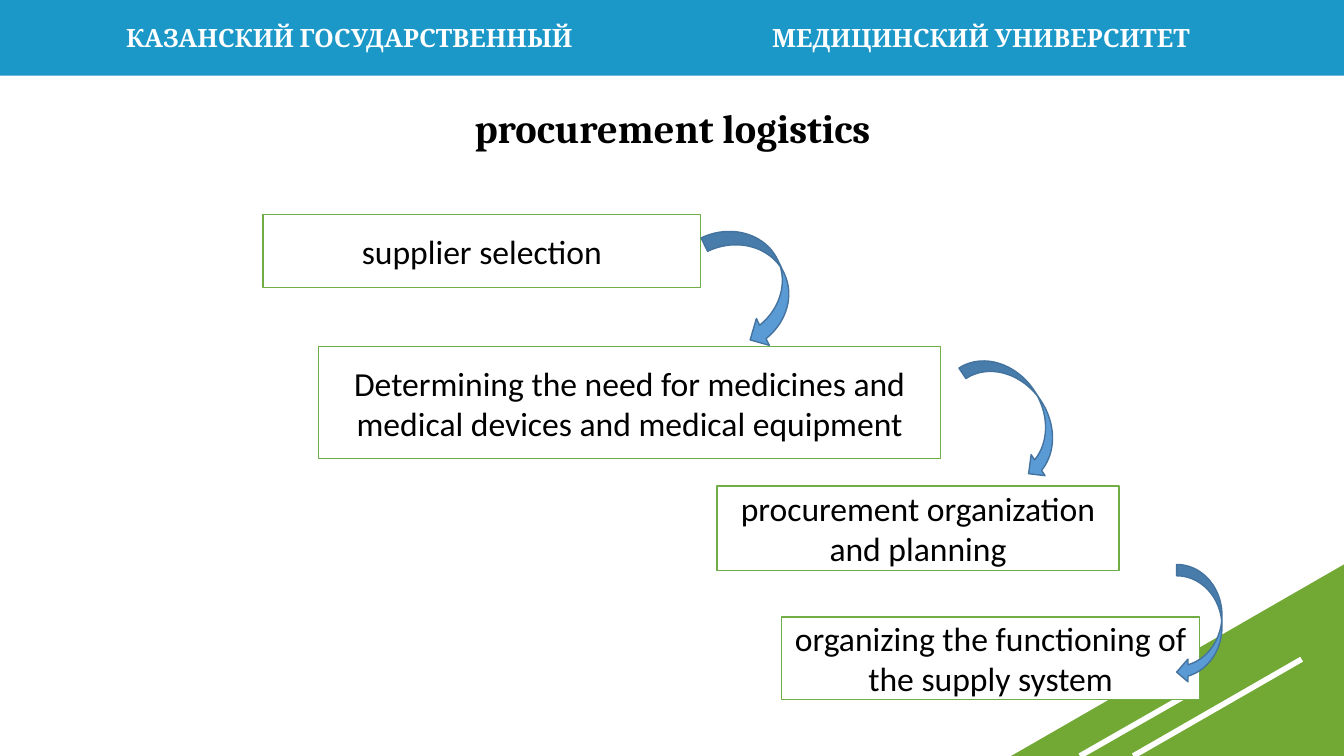
from dataclasses import dataclass

from lxml import etree
from pptx import Presentation
from pptx.dml.color import RGBColor
from pptx.enum.shapes import MSO_CONNECTOR, MSO_SHAPE
from pptx.enum.text import MSO_ANCHOR, PP_ALIGN
from pptx.oxml.ns import qn
from pptx.util import Inches, Pt

RECTANGLE = MSO_SHAPE.RECTANGLE
TRIANGLE = MSO_SHAPE.RIGHT_TRIANGLE
CURVED_DOWN = MSO_SHAPE.CURVED_DOWN_ARROW
CURVED_LEFT = MSO_SHAPE.CURVED_LEFT_ARROW
STRAIGHT = MSO_CONNECTOR.STRAIGHT
LEFT, CENTER, RIGHT = PP_ALIGN.LEFT, PP_ALIGN.CENTER, PP_ALIGN.RIGHT
TOP, MIDDLE = MSO_ANCHOR.TOP, MSO_ANCHOR.MIDDLE


@dataclass(frozen=True)
class Theme:
    banner: str = "1B97C8"
    corner: str = "71A934"
    white: str = "FFFFFF"
    black: str = "000000"
    box_line: str = "70AD47"
    arrow: str = "5B9BD5"
    arrow_line: str = "43739E"
    heading_font: str = "Cambria"
    body_font: str = "Calibri"
    banner_size: float = 18
    title_size: float = 28.8
    body_size: float = 24
    outline: float = 1
    stripe: float = 4


THEME = Theme()
SLIDE_WIDTH, SLIDE_HEIGHT = 13.33, 7.5
BANNER_HEIGHT = 0.75
TITLE = ("procurement logistics", (0.92, 1.06, 11.5, 0.47))
BANNER_LABELS = [
    ("КАЗАНСКИЙ ГОСУДАРСТВЕННЫЙ", 0.92, RIGHT),
    ("МЕДИЦИНСКИЙ УНИВЕРСИТЕТ", 7.56, LEFT),
]
CORNER_SIZE = (3.3, 1.9)
STRIPES = [((10.71, 7.5), (11.76, 6.9)), ((11.24, 7.5), (12.91, 6.54))]
STEPS = [
    ("supplier selection", (2.61, 2.13, 4.34, 0.72)),
    ("Determining the need for medicines and medical devices and medical equipment",
     (3.16, 3.44, 6.17, 1.11)),
    ("procurement organization and planning", (7.11, 4.82, 3.99, 0.84)),
    ("organizing the functioning of the supply system", (7.75, 6.12, 4.15, 0.82)),
]
ARROWS = [
    (CURVED_DOWN, (6.86, 2.51, 1.27, 0.59), 64.3),
    (CURVED_LEFT, (9.85, 3.4, 0.5, 1.38), 326.6),
    (CURVED_LEFT, (11.67, 5.6, 0.45, 1.18), 0),
]


def color(value):
    return RGBColor.from_string(value)


def write_text(shape, text, *, font=THEME.body_font, size=THEME.body_size,
               ink=THEME.black, bold=False, align=CENTER, anchor=MIDDLE, spacing=1.0):
    frame = shape.text_frame
    frame.word_wrap = True
    frame.vertical_anchor = anchor
    para = frame.paragraphs[0]
    para.alignment = align
    para.line_spacing = spacing
    span = para.add_run()
    span.text = text
    span.font.name = font
    span.font.size = Pt(size)
    span.font.bold = bold
    span.font.color.rgb = color(ink)


def add_box(page, kind, area, fill, line=None, rotation=0):
    box = page.shapes.add_shape(kind, *map(Inches, area))
    box.shadow.inherit = False
    box.rotation = rotation
    box.fill.solid()
    box.fill.fore_color.rgb = color(fill)
    if line:
        box.line.color.rgb = color(line)
        box.line.width = Pt(THEME.outline)
    else:
        box.line.fill.background()
    return box


def add_stripe(page, start, end):
    stripe = page.shapes.add_connector(STRAIGHT, *map(Inches, start + end))
    stripe.line.color.rgb = color(THEME.white)
    stripe.line.width = Pt(THEME.stripe)
    etree.SubElement(stripe._element.spPr, qn("a:effectLst"))


def add_background(page):
    add_box(page, RECTANGLE, (0, 0, SLIDE_WIDTH, BANNER_HEIGHT), THEME.banner)
    width, height = CORNER_SIZE
    corner = add_box(page, TRIANGLE,
                     (SLIDE_WIDTH - width, SLIDE_HEIGHT - height, width, height),
                     THEME.corner)
    corner._element.spPr.get_or_add_xfrm().set("flipH", "1")
    for start, end in STRIPES:
        add_stripe(page, start, end)
    for text, left, align in BANNER_LABELS:
        label = page.shapes.add_textbox(*map(Inches, (left, 0.17, 4.86, 0.4)))
        write_text(label, text, font=THEME.heading_font, size=THEME.banner_size,
                   ink=THEME.white, bold=True, align=align, anchor=TOP)


def add_title(page):
    text, area = TITLE
    title = page.shapes.title
    title.left, title.top, title.width, title.height = map(Inches, area)
    write_text(title, text, font=THEME.heading_font, size=THEME.title_size,
               bold=True, spacing=0.9)


def main():
    deck = Presentation()
    deck.slide_width, deck.slide_height = Inches(SLIDE_WIDTH), Inches(SLIDE_HEIGHT)
    page = deck.slides.add_slide(deck.slide_layouts[5])
    add_background(page)
    add_title(page)
    for text, area in STEPS:
        write_text(add_box(page, RECTANGLE, area, THEME.white, THEME.box_line), text)
    for kind, area, rotation in ARROWS:
        add_box(page, kind, area, THEME.arrow, THEME.arrow_line, rotation)
    deck.save("out.pptx")


if __name__ == "__main__":
    main()
